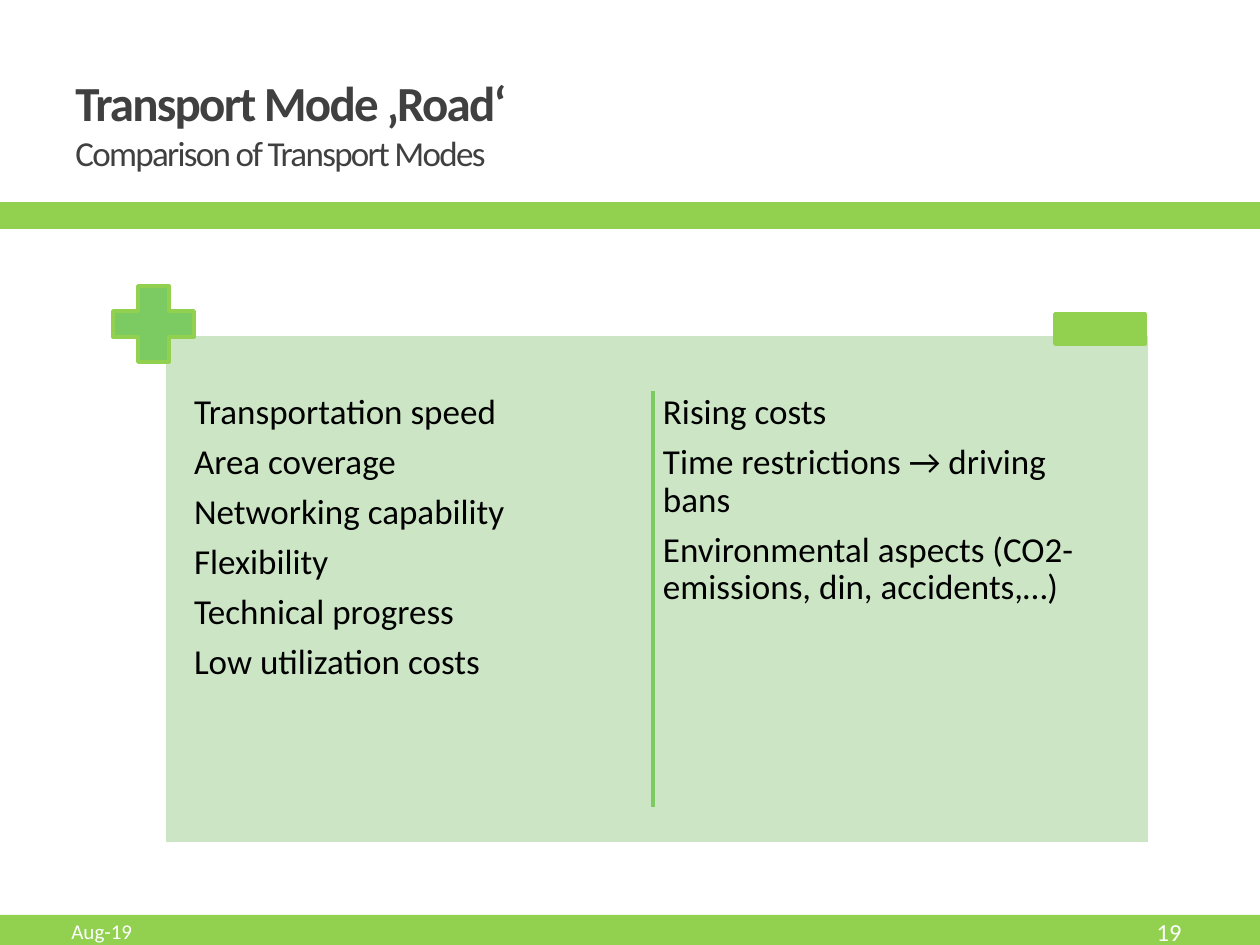
import pptx
import pptx.util
from pptx.dml.color import RGBColor
from pptx.enum.shapes import MSO_CONNECTOR, MSO_SHAPE
from pptx.enum.text import MSO_ANCHOR, PP_ALIGN
from pptx.oxml.ns import qn
import lxml.etree

PX_PER_INCH = 126
SLIDE_W, SLIDE_H = 1260, 945
LINE_WIDTH = pptx.util.Pt(2.08)
FONT = "Calibri"

LIME = RGBColor(0x92, 0xD0, 0x50)
GREEN = RGBColor(0x7C, 0xCA, 0x62)
PALE_GREEN = RGBColor(0xCC, 0xE6, 0xC5)
GREY = RGBColor(0x40, 0x40, 0x40)
BLACK = RGBColor(0, 0, 0)
WHITE = RGBColor(0xFF, 0xFF, 0xFF)

ADVANTAGES = ["Transportation speed", "Area coverage", "Networking capability",
              "Flexibility", "Technical progress", "Low utilization costs"]
DRAWBACKS = ["Rising costs", "Time restrictions → driving bans",
             "Environmental aspects (CO2-emissions, din, accidents,…)"]


def px(length):
    return pptx.util.Emu(round(length * 914400 / PX_PER_INCH))


def add_block(slide, preset, box, fill, outline=None):
    block = slide.shapes.add_shape(preset, *map(px, box))
    block.shadow.inherit = False
    block.fill.solid()
    block.fill.fore_color.rgb = fill
    if outline is None:
        block.line.fill.background()
    else:
        block.line.color.rgb = outline
        block.line.width = LINE_WIDTH
    return block


def add_text(slide, box, lines, size, color, anchor=MSO_ANCHOR.MIDDLE, inset=None):
    """Add a wrapping text box with one paragraph per line and return its frame."""
    frame = slide.shapes.add_textbox(*map(px, box)).text_frame
    frame.word_wrap = True
    frame.vertical_anchor = anchor
    if inset is not None:
        frame.margin_left = frame.margin_right = px(inset)
        frame.margin_top = frame.margin_bottom = px(inset)
    frame.text = "\n".join(lines)
    for paragraph in frame.paragraphs:
        for run in paragraph.runs:
            run.font.name = FONT
            run.font.size = pptx.util.Pt(size)
            run.font.color.rgb = color
    return frame


def add_header(slide, left, top, width):
    add_block(slide, MSO_SHAPE.RECTANGLE, (left, top + 149, width, 23), LIME, LIME)
    title = add_text(slide, (left + 63, top, 656, 136),
                     ["Transport Mode ‚Road‘\vComparison of Transport Modes"], 20, GREY)
    heading, subheading = title.paragraphs[0].runs
    heading.font.size = pptx.util.Pt(28)
    heading.font.bold = True
    for run in (heading, subheading):
        run.font._element.set("spc", "-100")


def add_divider(slide, x, top, bottom):
    divider = slide.shapes.add_connector(
        MSO_CONNECTOR.STRAIGHT, px(x), px(top), px(x), px(bottom))
    divider.line.color.rgb = GREEN
    divider.line.width = LINE_WIDTH
    lxml.etree.SubElement(divider._element.spPr, qn("a:effectLst"))


def add_comparison(slide, left, top, width, height):
    """Place advantages and drawbacks on one panel, under a plus and a minus."""
    add_block(slide, MSO_SHAPE.RECTANGLE, (left, top, width, height), PALE_GREEN, WHITE)
    for offset, points in ((25, ADVANTAGES), (494, DRAWBACKS)):
        column = add_text(slide, (left + offset, top + 55, 459, 436), points, 20, BLACK,
                          MSO_ANCHOR.TOP, inset=5)
        for paragraph in column.paragraphs:
            paragraph.line_spacing = 0.9
            paragraph.space_after = pptx.util.Pt(7)
    plus = add_block(slide, MSO_SHAPE.CROSS, (left - 51, top - 48, 81, 76), GREEN, LIME)
    plus.adjustments[0] = 0.33
    add_block(slide, MSO_SHAPE.RECTANGLE, (left + width - 95, top - 20, 90, 30), LIME, LIME)
    add_divider(slide, left + 489, top + 57, top + 473)


def add_footer(slide, left, top, width, height):
    add_block(slide, MSO_SHAPE.RECTANGLE, (left, top, width, height), LIME)
    add_text(slide, (left + 59, top - 6, 400, 45), ["Aug-19"], 12, WHITE)
    page = add_text(slide, (left + width - 213, top - 6, 147, 45), ["19"], 14, WHITE)
    page.paragraphs[0].alignment = PP_ALIGN.RIGHT


def main():
    deck = pptx.Presentation()
    deck.slide_width, deck.slide_height = px(SLIDE_W), px(SLIDE_H)
    slide = deck.slides.add_slide(deck.slide_layouts[6])
    add_header(slide, 0, 55, SLIDE_W)
    add_comparison(slide, 164, 334, 986, 510)
    add_footer(slide, 0, 915, SLIDE_W, 30)
    deck.save("out.pptx")


if __name__ == "__main__":
    main()
